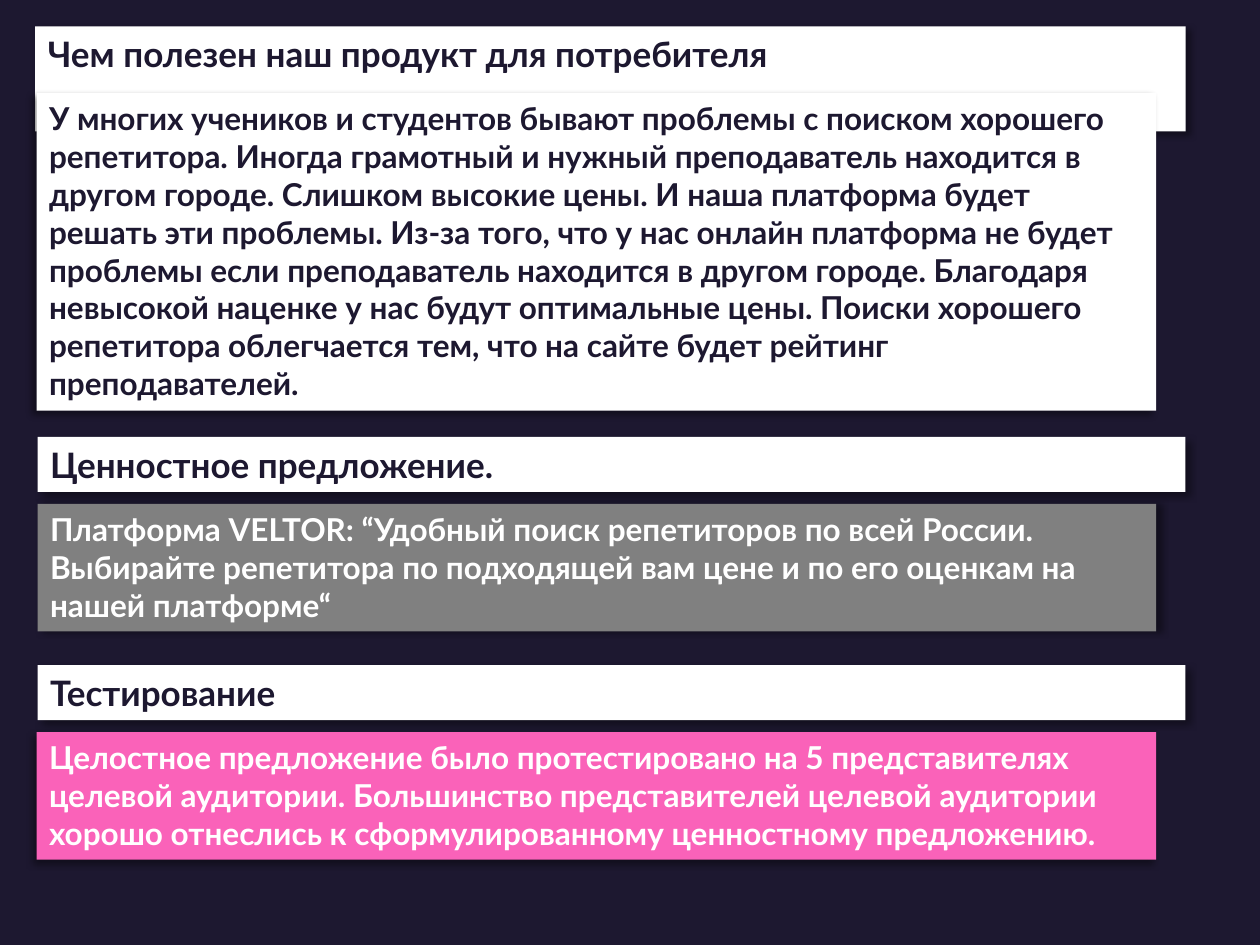
from dataclasses import dataclass

from lxml import etree
from pptx import Presentation
from pptx.dml.color import RGBColor
from pptx.enum.text import MSO_ANCHOR, MSO_AUTO_SIZE, PP_ALIGN
from pptx.oxml.ns import qn
from pptx.util import Cm, Pt

TOP = MSO_ANCHOR.TOP
GROW = MSO_AUTO_SIZE.SHAPE_TO_FIT_TEXT
LEFT = PP_ALIGN.LEFT
TITLE_ONLY = 5


@dataclass(frozen=True)
class Theme:
    font: str = "Lato"
    dark: str = "1D1830"
    white: str = "FFFFFF"
    gray: str = "808080"
    pink: str = "FA62B9"
    shadow: str = "000000"
    heading_size: int = 20
    body_size: int = 18


THEME = Theme()
HEADING_RIGHT = 23.9
BODY_RIGHT = 23.31
HEADING_HEIGHT = 1.11
BODY_OFFSET = 1.35

SECTIONS = [
    dict(
        top=0.53, heading_left=0.71, body_left=0.74, body_height=6.4,
        fill=THEME.white, color=THEME.dark, angle=135,
        heading="Чем полезен наш продукт для потребителя",
        body="У многих учеников и студентов бывают проблемы с поиском хорошего "
             "репетитора. Иногда грамотный и нужный преподаватель находится в "
             "другом городе. Слишком высокие цены. И наша платформа будет "
             "решать эти проблемы. Из-за того, что у нас онлайн платформа не будет "
             "проблемы если преподаватель находится в другом городе. Благодаря "
             "невысокой наценке у нас будут оптимальные цены. Поиски хорошего "
             "репетитора облегчается тем, что на сайте будет рейтинг преподавателей.",
    ),
    dict(
        top=8.81, heading_left=0.76, body_left=0.76, body_height=2.57,
        fill=THEME.gray, color=THEME.white, angle=0,
        heading="Ценностное предложение.",
        body="Платформа VELTOR: “Удобный поиск репетиторов по всей России. "
             "Выбирайте репетитора по подходящей вам цене и по его оценкам на "
             "нашей платформе“",
    ),
    dict(
        top=13.41, heading_left=0.76, body_left=0.74, body_height=2.57,
        fill=THEME.pink, color=THEME.white, angle=135,
        heading="Тестирование",
        body="Целостное предложение было протестировано на 5 представителях "
             "целевой аудитории. Большинство представителей целевой аудитории "
             "хорошо отнеслись к сформулированному ценностному предложению.",
    ),
]


def add_shadow(box, angle):
    box.shadow.inherit = False
    effects = box._element.spPr.find(qn("a:effectLst"))
    shadow = etree.SubElement(
        effects, qn("a:outerShdw"), blurRad=str(Pt(4)), dist=str(Pt(3)),
        dir=str(angle * 60000), algn="ctr", rotWithShape="0")
    color = etree.SubElement(shadow, qn("a:srgbClr"), val=THEME.shadow)
    etree.SubElement(color, qn("a:alpha"), val="40000")


def place(box, left, top, right, height):
    box.left, box.top = Cm(left), Cm(top)
    box.width, box.height = Cm(right - left), Cm(height)


def style_panel(box, text, size, color, fill, angle):
    box.fill.solid()
    box.fill.fore_color.rgb = RGBColor.from_string(fill)
    box.line.fill.background()
    add_shadow(box, angle)
    frame = box.text_frame
    frame.word_wrap = True
    frame.auto_size = GROW
    frame.vertical_anchor = TOP
    para = frame.paragraphs[0]
    para.alignment = LEFT
    span = para.add_run()
    span.text = text
    span.font.name = THEME.font
    span.font.size = Pt(size)
    span.font.bold = True
    span.font.color.rgb = RGBColor.from_string(color)


def add_box(page):
    return page.shapes.add_textbox(0, 0, 0, 0)


def add_section(page, section, heading):
    top = section["top"]
    place(heading, section["heading_left"], top, HEADING_RIGHT, HEADING_HEIGHT)
    style_panel(heading, section["heading"], THEME.heading_size,
                THEME.dark, THEME.white, 45)
    body = add_box(page)
    place(body, section["body_left"], top + BODY_OFFSET, BODY_RIGHT,
          section["body_height"])
    style_panel(body, section["body"], THEME.body_size,
                section["color"], section["fill"], section["angle"])


def main():
    deck = Presentation()
    deck.slide_width, deck.slide_height = Cm(25.4), Cm(19.05)
    page = deck.slides.add_slide(deck.slide_layouts[TITLE_ONLY])
    page.background.fill.solid()
    page.background.fill.fore_color.rgb = RGBColor.from_string(THEME.dark)
    for index, section in enumerate(SECTIONS):
        heading = page.shapes.title if index == 0 else add_box(page)
        add_section(page, section, heading)
    deck.save("out.pptx")


if __name__ == "__main__":
    main()
